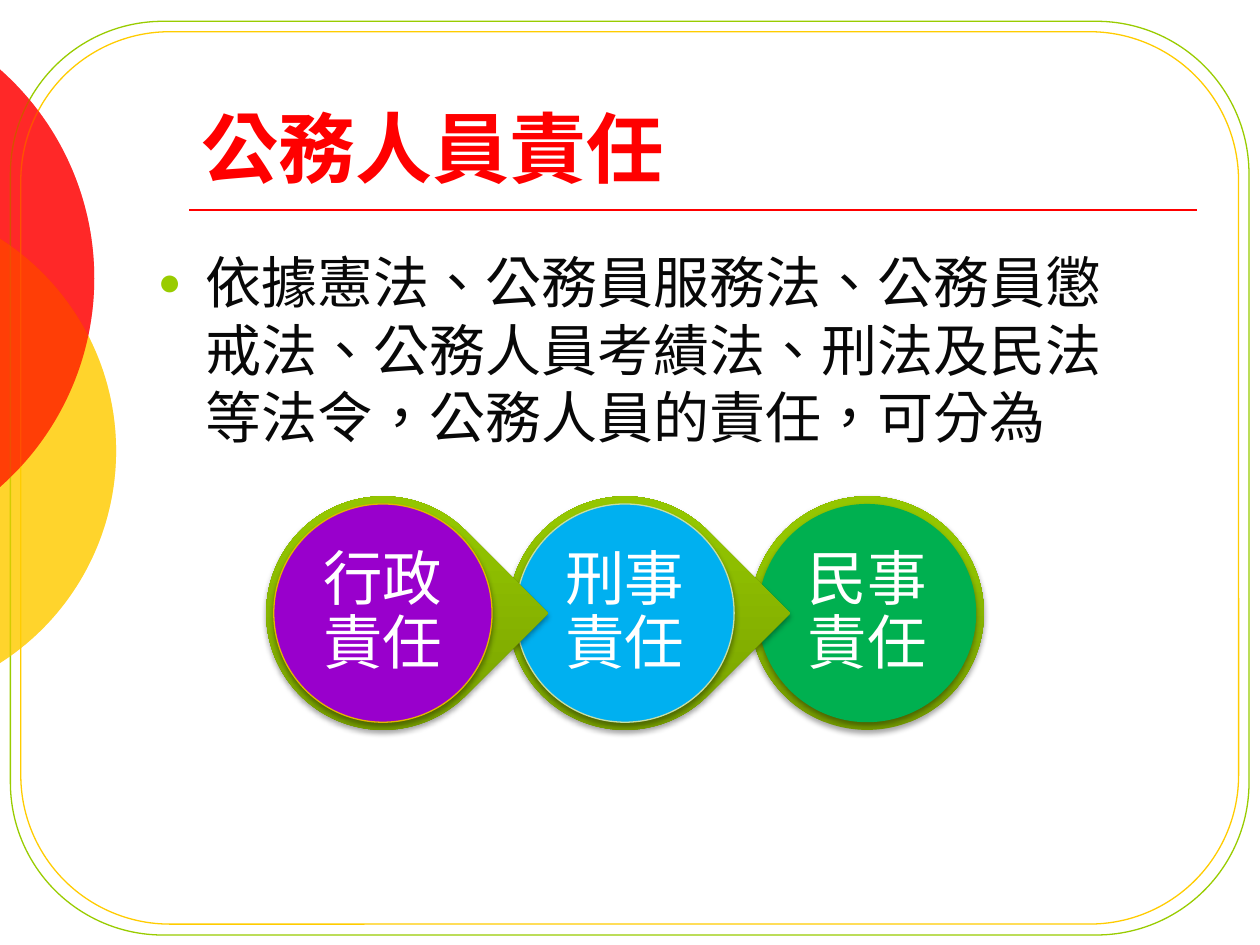
import math

from lxml import etree
from pptx import Presentation
from pptx.dml.color import RGBColor
from pptx.enum import shapes, text
from pptx.oxml import parse_xml
from pptx.oxml.ns import nsdecls, qn
from pptx.util import Cm, Pt

RED = RGBColor(0xFF, 0x00, 0x00)
YELLOW = RGBColor(0xFF, 0xCC, 0x00)
LIME = RGBColor(0x99, 0xCC, 0x00)
INK = RGBColor(0x08, 0x08, 0x08)
WHITE = RGBColor(0xFF, 0xFF, 0xFF)
PURPLE = RGBColor(0x99, 0x00, 0xCC)
GOLD = RGBColor(0xE2, 0xB5, 0x00)
BLUE = RGBColor(0x00, 0xB0, 0xF0)
PALE_GREEN = RGBColor(0xC6, 0xDE, 0xA5)
GREEN = RGBColor(0x00, 0xB0, 0x50)
RIM_STOPS = ((0, RGBColor(0x72, 0x98, 0x00)),
             (80, RGBColor(0x94, 0xC6, 0x00)),
             (100, RGBColor(0x95, 0xC7, 0x00)))
FONT = "Noto Sans CJK SC"

# label, disc colour, outline colour, rim shape
DUTIES = (
    ("行政責任", PURPLE, GOLD, shapes.MSO_SHAPE.TEAR),
    ("刑事責任", BLUE, PALE_GREEN, shapes.MSO_SHAPE.TEAR),
    ("民事責任", GREEN, None, shapes.MSO_SHAPE.OVAL),
)
FIRST_X, CENTER_Y, STEP = 7.72, 12.36, 4.88
RIM, DISC, LABEL = 4.71, 4.4, 3.15


def add_run(paragraph, words, size, color, bold=False):
    run = paragraph.add_run()
    run.text = words
    run.font.size = Pt(size)
    run.font.bold = bold
    run.font.color.rgb = color
    run.font.name = FONT
    props = run.font._element
    props.set("lang", "zh-TW")
    etree.SubElement(props, qn("a:ea"), typeface=FONT)


def set_outline(shape, color, width=0.75):
    if color is None:
        shape.line.fill.background()
    else:
        shape.line.color.rgb = color
        shape.line.width = Pt(width)


def place(shape, left, top, width, height):
    shape.left, shape.top = Cm(left), Cm(top)
    shape.width, shape.height = Cm(width), Cm(height)


def bend_into_arc(disc, radius, reach):
    """Replace the outline by an arc from -reach to reach, closed by its chord."""
    def spot(angle, pull=0.0):
        """Point on the arc, moved along the tangent by pull radii."""
        x = radius * (1 + math.cos(angle) - pull * math.sin(angle))
        y = radius * (1 + math.sin(angle) + pull * math.cos(angle))
        return Cm(x), Cm(y)

    def add_step(kind, *points):
        step = etree.SubElement(outline, qn(kind))
        for x, y in points:
            etree.SubElement(step, qn("a:pt"), x=str(x), y=str(y))

    outline = next(disc._element.iter(qn("a:path")))
    for step in list(outline):
        outline.remove(step)
    outline.set("w", str(Cm(2 * radius)))
    outline.set("h", str(Cm(2 * radius)))
    pull = 4 / 3 * math.tan(reach / 4)
    add_step("a:moveTo", spot(-reach))
    for start, end in ((-reach, 0), (0, reach)):
        add_step("a:cubicBezTo", spot(start, pull), spot(end, -pull), spot(end))
    add_step("a:close")


def add_side_disc(slide, center_x, center_y, radius, color, opacity):
    """Draw the part of a disc that lies right of the slide's left edge."""
    builder = slide.shapes.build_freeform(0, 0)
    builder.add_line_segments([(Cm(radius), Cm(radius)), (0, Cm(radius))])
    disc = builder.convert_to_shape()
    place(disc, center_x - radius, center_y - radius, 2 * radius, 2 * radius)
    bend_into_arc(disc, radius, math.acos(-center_x / radius))
    disc.shadow.inherit = False
    disc.fill.solid()
    disc.fill.fore_color.rgb = color
    tint = disc._element.spPr.find(qn("a:solidFill"))[0]
    etree.SubElement(tint, qn("a:alpha"), val=str(opacity * 1000))
    set_outline(disc, None)


def add_side_discs(slide):
    add_side_disc(slide, -2.74, 9.09, 5.08, YELLOW, 58)
    add_side_disc(slide, -3.71, 5.61, 5.61, RED, 60)


def add_frame(slide, left, top, width, height, color):
    frame = slide.shapes.add_shape(shapes.MSO_SHAPE.ROUNDED_RECTANGLE,
                                   Cm(left), Cm(top), Cm(width), Cm(height))
    frame.adjustments[0] = 0.167
    frame.shadow.inherit = False
    frame.fill.background()
    set_outline(frame, color)


def add_title_rule(slide):
    rule = slide.shapes.add_connector(shapes.MSO_CONNECTOR.STRAIGHT,
                                      Cm(3.81), Cm(4.24), Cm(24.13), Cm(4.24))
    set_outline(rule, RED, 1)
    etree.SubElement(rule._element.spPr, qn("a:effectLst"))


def fill_title(title):
    place(title, 3.81, 0.84, 20.32, 3.18)
    frame = title.text_frame
    frame.vertical_anchor = text.MSO_ANCHOR.BOTTOM
    frame.auto_size = text.MSO_AUTO_SIZE.NONE
    frame.paragraphs[0].alignment = text.PP_ALIGN.LEFT
    add_run(frame.paragraphs[0], "公務人員責任", 44, RED, bold=True)


def fill_body(body):
    place(body, 2.93, 4.87, 20.32, 11.43)
    body.text_frame.auto_size = text.MSO_AUTO_SIZE.NONE
    paragraph = body.text_frame.paragraphs[0]
    paragraph.space_before = Pt(6.4)
    props = paragraph._p.get_or_add_pPr()
    props.set("marL", str(Cm(0.95)))
    props.set("indent", str(-Cm(0.95)))
    color = etree.SubElement(props, qn("a:buClr"))
    etree.SubElement(color, qn("a:srgbClr"), val=str(LIME))
    etree.SubElement(props, qn("a:buSzPct"), val="70000")
    etree.SubElement(props, qn("a:buChar"), char="●")
    add_run(paragraph, "依據憲法、公務員服務法、公務員懲戒法、公務人員考績法、"
                       "刑法及民法等法令，公務人員的責任，可分為", 32, INK)


def add_round(slide, kind, center_x, size):
    """Add a shadowed shape centred on the row of duties."""
    shape = slide.shapes.add_shape(kind, Cm(center_x - size / 2),
                                   Cm(CENTER_Y - size / 2), Cm(size), Cm(size))
    shape.shadow.inherit = False
    effects = shape._element.spPr.find(qn("a:effectLst"))
    shadow = etree.SubElement(effects, qn("a:outerShdw"), blurRad=str(Pt(3.1)),
                              dist=str(Pt(1.8)), dir="5400000", rotWithShape="0")
    color = etree.SubElement(shadow, qn("a:srgbClr"), val="000000")
    etree.SubElement(color, qn("a:alpha"), val="35000")
    return shape


def fill_rim(rim):
    stops = "".join(f'<a:gs pos="{pos * 1000}"><a:srgbClr val="{color}"/></a:gs>'
                    for pos, color in RIM_STOPS)
    gradient = parse_xml(f'<a:gradFill {nsdecls("a")} rotWithShape="0">'
                         f'<a:gsLst>{stops}</a:gsLst>'
                         '<a:lin ang="16200000" scaled="0"/></a:gradFill>')
    rim._element.spPr.find(qn("a:prstGeom")).addnext(gradient)


def add_duty(slide, center_x, label, color, outline, rim_kind):
    rim = add_round(slide, rim_kind, center_x, RIM)
    if rim_kind == shapes.MSO_SHAPE.TEAR:
        rim.adjustments[0] = 1
        rim.rotation = 45
    fill_rim(rim)
    set_outline(rim, None)

    disc = add_round(slide, shapes.MSO_SHAPE.OVAL, center_x, DISC)
    disc.fill.solid()
    disc.fill.fore_color.rgb = color
    set_outline(disc, outline)

    box = slide.shapes.add_textbox(Cm(center_x - LABEL / 2), Cm(CENTER_Y - LABEL / 2),
                                   Cm(LABEL), Cm(LABEL))
    frame = box.text_frame
    frame.word_wrap = True
    frame.vertical_anchor = text.MSO_ANCHOR.MIDDLE
    frame.margin_left = frame.margin_right = Cm(0.12)
    frame.margin_top = frame.margin_bottom = Cm(0.12)
    paragraph = frame.paragraphs[0]
    paragraph.alignment = text.PP_ALIGN.CENTER
    paragraph.line_spacing = 0.9
    add_run(paragraph, label, 34, WHITE)


def main():
    deck = Presentation()
    deck.slide_width, deck.slide_height = Cm(25.4), Cm(19.05)
    slide = deck.slides.add_slide(deck.slide_layouts[1])
    add_side_discs(slide)
    add_frame(slide, 0.21, 0.43, 24.97, 18.42, LIME)
    add_frame(slide, 0.42, 0.64, 24.55, 17.99, YELLOW)
    add_title_rule(slide)
    add_side_discs(slide)  # a second layer deepens the tint and veils the frames
    fill_title(slide.shapes.title)
    fill_body(slide.placeholders[1])
    for order, duty in reversed(list(enumerate(DUTIES))):
        add_duty(slide, FIRST_X + order * STEP, *duty)
    deck.save("out.pptx")


if __name__ == "__main__":
    main()
